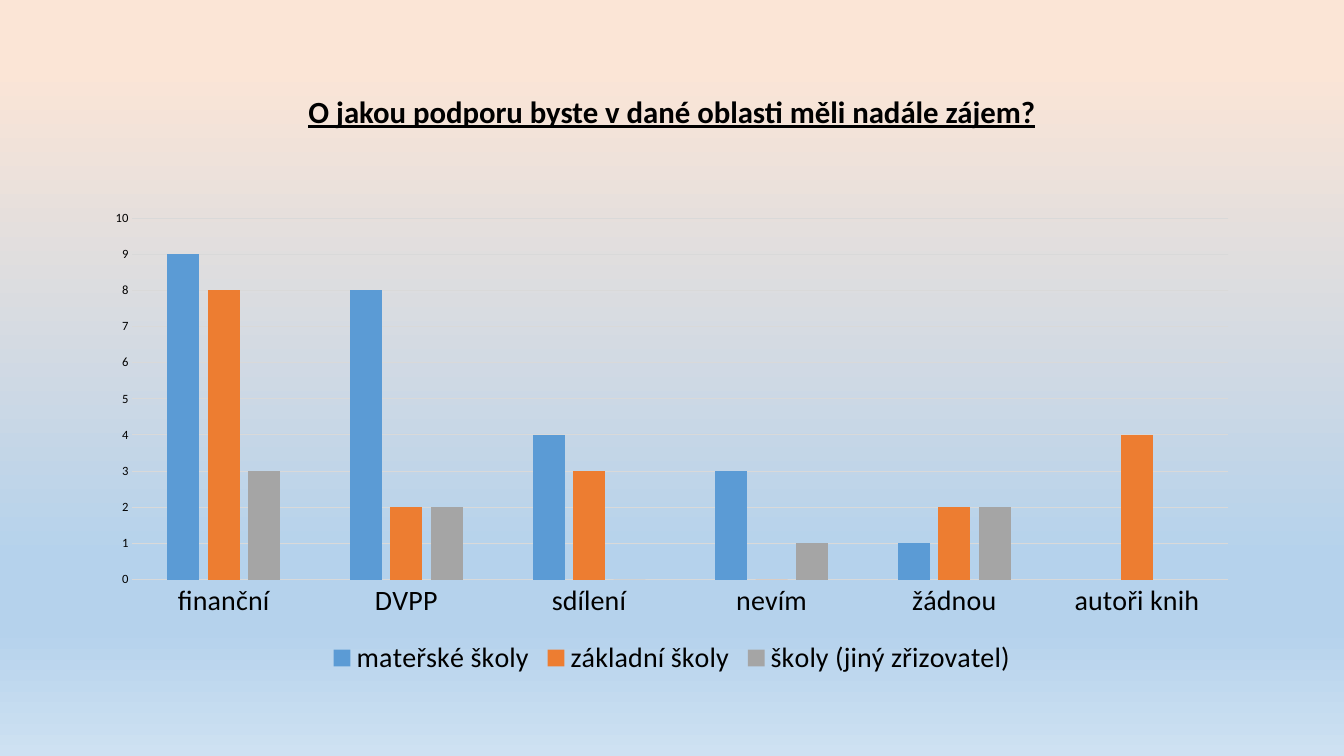
from lxml import etree
from pptx import Presentation
from pptx.chart.data import CategoryChartData
from pptx.dml.color import RGBColor
from pptx.enum import chart as ch, text
from pptx.oxml.ns import qn
from pptx.util import Cm, Pt

# Content
TITLE = "O jakou podporu byste v dané oblasti měli nadále zájem?"
CATEGORIES = ["finanční", "DVPP", "sdílení", "nevím", "žádnou", "autoři knih"]
SERIES = [
    ("mateřské školy", "5B9BD5", [9, 8, 4, 3, 1, None]),
    ("základní školy", "ED7D31", [8, 2, 3, 0, 2, 4]),
    ("školy (jiný zřizovatel)", "A5A5A5", [3, 2, 0, 1, 2, None]),
]
BACKGROUND = [(9, "FBE5D6"), (74, "B5D2EC"), (83, "B5D2EC"), (100, "CEE1F2")]
BLACK, GREY = "000000", "D9D9D9"
WIDTH, HEIGHT = Cm(33.87), Cm(19.05)
MARGIN = Cm(2.33)


def rgb(color):
    return RGBColor.from_string(color)


def set_font(font, size, name="Calibri"):
    font.size, font.name = Pt(size), name
    font.color.rgb = rgb(BLACK)


def set_line(line):
    line.color.rgb = rgb(GREY)
    line.width = Pt(0.75)


prs = Presentation()
prs.slide_width, prs.slide_height = WIDTH, HEIGHT
s = prs.slides.add_slide(prs.slide_layouts[6])
content_width = WIDTH - 2 * MARGIN

# Background gradient, top to bottom
fill = s.background.fill
fill.gradient()
fill.gradient_angle = 270
stops = s.element.find(".//" + qn("a:gsLst"))
for stop in list(stops):
    stops.remove(stop)
for percent, color in BACKGROUND:
    stop = etree.SubElement(stops, qn("a:gs"), pos=str(percent * 1000))
    etree.SubElement(stop, qn("a:srgbClr"), val=color)

# Title
tf = s.shapes.add_textbox(MARGIN, Cm(1.01), content_width, Cm(3.68)).text_frame
tf.word_wrap = True
tf.vertical_anchor = text.MSO_ANCHOR.MIDDLE
p = tf.paragraphs[0]
p.text = TITLE
p.alignment = text.PP_ALIGN.CENTER
p.line_spacing = 0.9
set_font(p.font, 22)
p.font.bold = p.font.underline = True

# Chart
data = CategoryChartData()
data.categories = CATEGORIES
for name, _, values in SERIES:
    data.add_series(name, values)
chart = s.shapes.add_chart(ch.XL_CHART_TYPE.COLUMN_CLUSTERED, MARGIN, Cm(5.07),
                           content_width, Cm(12.09), data).chart
set_font(chart.font, 10, "Arial")
chart.has_title = False

plot = chart.plots[0]
plot.gap_width, plot.overlap = 219, -27
plot.vary_by_categories = False
for series, (_, color, _) in zip(plot.series, SERIES):
    series.format.fill.solid()
    series.format.fill.fore_color.rgb = rgb(color)
    series.invert_if_negative = False

# Axes and legend
for axis, size in ((chart.category_axis, 20), (chart.value_axis, 9)):
    axis.major_tick_mark = axis.minor_tick_mark = ch.XL_TICK_MARK.NONE
    set_font(axis.tick_labels.font, size)
set_line(chart.category_axis.format.line)
chart.value_axis.format.line.fill.background()
set_line(chart.value_axis.major_gridlines.format.line)
chart.value_axis.minimum_scale, chart.value_axis.maximum_scale = 0, 10
chart.value_axis.major_unit = 1

chart.has_legend = True
chart.legend.position = ch.XL_LEGEND_POSITION.BOTTOM
chart.legend.include_in_layout = False
set_font(chart.legend.font, 20)

prs.save("out.pptx")
